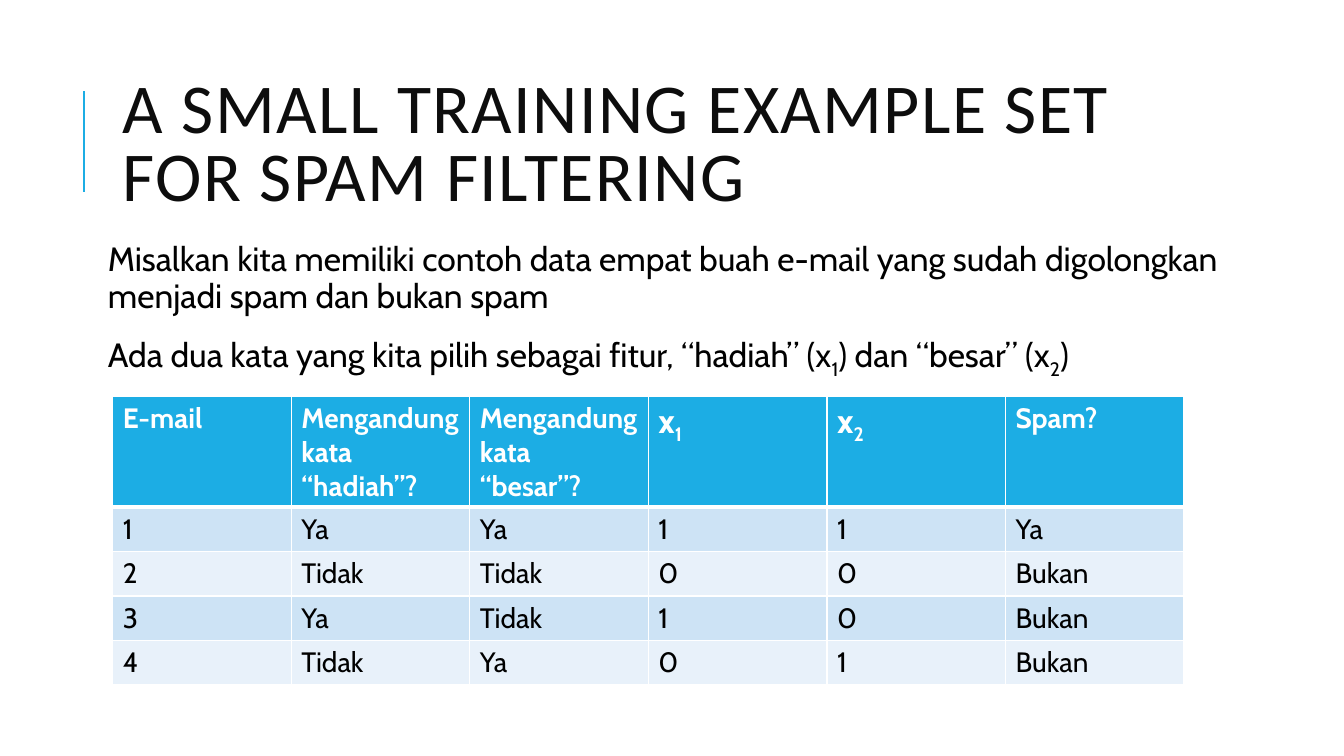
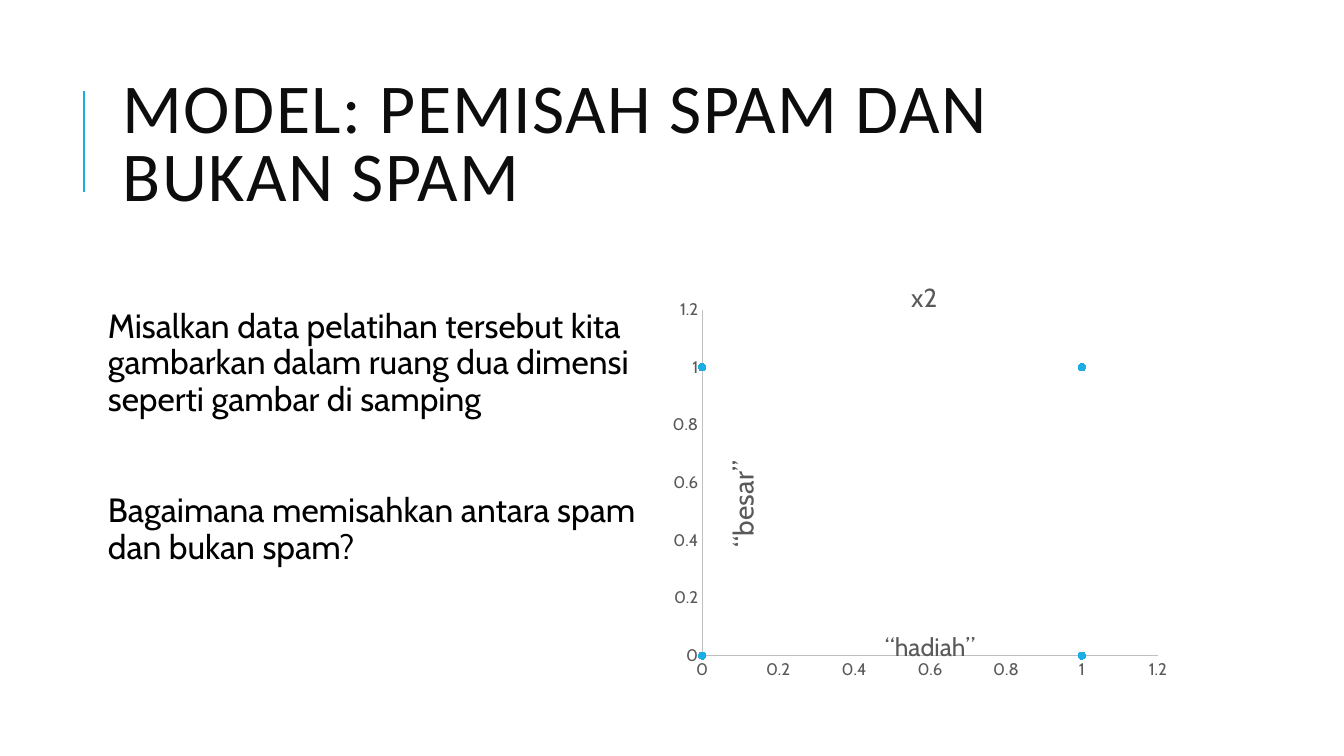
from dataclasses import dataclass

from lxml import etree
from pptx import Presentation, util as u
from pptx.chart import data as chart_data
from pptx.dml import color
from pptx.enum import chart as charts, shapes, text
from pptx.oxml import ns


@dataclass(frozen=True)
class Theme:
    accent: str = "1CADE4"
    title_ink: str = "0D0D0D"
    ink: str = "000000"
    white: str = "FFFFFF"
    gray: str = "595959"
    axis: str = "BFBFBF"
    bands: tuple = ("CDE3F5", "E8F1FA")
    title_font: str = "Calibri"
    body_font: str = "Cabin"
    title_size: float = 50
    body_size: float = 24
    table_size: float = 20
    tick_size: float = 12
    chart_title_size: float = 18.6
    x_title_size: float = 18
    y_title_size: float = 20


def rgb(value):
    return color.RGBColor.from_string(value)


def place(element, index, **values):
    """Give a chart title or plot area a manual layout, in fractions of the chart."""
    layout = element.find(ns.qn("c:layout"))
    if layout is None:
        layout = etree.Element(ns.qn("c:layout"))
        element.insert(index, layout)
    manual = etree.SubElement(layout, ns.qn("c:manualLayout"))
    for name, value in values.items():
        etree.SubElement(manual, ns.qn(f"c:{name}")).set("val", str(value))


class Deck:
    def __init__(self, theme):
        self.theme = theme
        self.presentation = Presentation()
        self.presentation.slide_width = u.Cm(33.87)
        self.presentation.slide_height = u.Cm(19.05)
        self.slide = None

    def style(self, font, size, ink, name=None, bold=False):
        font.name = name or self.theme.body_font
        font.size = u.Pt(size)
        font.bold = bold
        font.color.rgb = rgb(ink)

    def add_runs(self, paragraph, parts, size, ink, bold=False):
        """Add the parts as runs; every second part is a subscript."""
        for index, part in enumerate(parts):
            run = paragraph.add_run()
            run.text = part
            self.style(run.font, size, ink, bold=bold)
            if index % 2:
                run._r.get_or_add_rPr().set("baseline", "-25000")

    def new_slide(self, title):
        theme = self.theme
        self.slide = self.presentation.slides.add_slide(
            self.presentation.slide_layouts.get_by_name("Title Only"))
        self.accent_line()
        shape = self.slide.shapes.title
        shape.left, shape.top = u.Cm(2.84), u.Cm(1.63)
        shape.width, shape.height = u.Cm(27), u.Cm(4.17)
        frame = shape.text_frame
        frame.word_wrap = True
        frame.auto_size = text.MSO_AUTO_SIZE.NONE
        frame.vertical_anchor = text.MSO_ANCHOR.MIDDLE
        paragraph = frame.paragraphs[0]
        paragraph.alignment = text.PP_ALIGN.LEFT
        paragraph.line_spacing = 0.8
        run = paragraph.add_run()
        run.text = title
        self.style(run.font, theme.title_size, theme.title_ink, theme.title_font)
        run._r.get_or_add_rPr().set("spc", "100")

    def accent_line(self):
        line = self.slide.shapes.add_connector(
            shapes.MSO_CONNECTOR.STRAIGHT,
            u.Cm(2.11), u.Cm(4.83), u.Cm(2.11), u.Cm(2.29))
        line.line.color.rgb = rgb(self.theme.accent)
        line.line.width = u.Pt(1.5)
        etree.SubElement(line._element.spPr, ns.qn("a:effectLst"))

    def body(self, top, width, height, paragraphs, gap=12):
        box = self.slide.shapes.add_textbox(
            u.Cm(2.34), u.Cm(top), u.Cm(width), u.Cm(height))
        frame = box.text_frame
        frame.word_wrap = True
        frame.margin_left = u.Cm(0.38)
        frame.margin_right = frame.margin_top = frame.margin_bottom = u.Cm(0.13)
        for index, parts in enumerate(paragraphs):
            paragraph = frame.add_paragraph() if index else frame.paragraphs[0]
            paragraph.line_spacing = 0.9
            paragraph.space_before = u.Pt(gap if index else 12)
            paragraph.space_after = u.Pt(2)
            self.add_runs(paragraph, parts, self.theme.body_size, self.theme.ink)

    def cell_borders(self, cell, top, bottom):
        """Draw white borders; top and bottom are widths in points."""
        properties = cell._tc.get_or_add_tcPr()
        widths = {"lnL": 1, "lnR": 1, "lnT": top, "lnB": bottom}
        for index, (side, width) in enumerate(widths.items()):
            line = etree.Element(ns.qn(f"a:{side}"), w=str(u.Pt(width)))
            fill = etree.SubElement(line, ns.qn("a:solidFill"))
            etree.SubElement(fill, ns.qn("a:srgbClr"), val=self.theme.white)
            properties.insert(index, line)

    def table(self, header, rows):
        theme = self.theme
        heights = [2.8] + [1.12] * len(rows)
        table = self.slide.shapes.add_table(
            len(heights), len(header), u.Cm(2.84), u.Cm(9.98),
            u.Cm(27), u.Cm(sum(heights))).table
        table.horz_banding = False
        for column in table.columns:
            column.width = u.Cm(27 / len(header))
        for row_index, values in enumerate([header, *rows]):
            table.rows[row_index].height = u.Cm(heights[row_index])
            is_header = row_index == 0
            fill = theme.accent if is_header else theme.bands[(row_index - 1) % 2]
            for column_index, value in enumerate(values):
                cell = table.cell(row_index, column_index)
                cell.fill.solid()
                cell.fill.fore_color.rgb = rgb(fill)
                self.cell_borders(cell, top=3 if row_index == 1 else 1,
                                  bottom=3 if is_header else 1)
                parts = (value,) if isinstance(value, str) else value
                size = theme.table_size if len(parts) == 1 else theme.body_size
                ink = theme.white if is_header else theme.ink
                self.add_runs(cell.text_frame.paragraphs[0], parts, size, ink, is_header)

    def chart_label(self, title, label, size, x, y):
        self.add_runs(title.text_frame.paragraphs[0], [label], size, self.theme.gray)
        place(title._element, 1, xMode="edge", yMode="edge", x=x, y=y)

    def format_axis(self, axis):
        axis.minimum_scale, axis.maximum_scale, axis.major_unit = 0, 1.2, 0.2
        axis.has_major_gridlines = False
        axis.major_tick_mark = axis.minor_tick_mark = charts.XL_TICK_MARK.NONE
        axis.format.line.color.rgb = rgb(self.theme.axis)
        axis.format.line.width = u.Pt(0.75)
        axis.tick_labels.number_format = "General"
        axis.tick_labels.number_format_is_linked = False
        self.style(axis.tick_labels.font, self.theme.tick_size, self.theme.gray)

    def scatter(self, name, points, x_title, y_title):
        theme = self.theme
        data = chart_data.XyChartData()
        series_data = data.add_series(name)
        for x, y in points:
            series_data.add_data_point(x, y)
        chart = self.slide.shapes.add_chart(
            charts.XL_CHART_TYPE.XY_SCATTER, u.Cm(16.64), u.Cm(6.35),
            u.Cm(13.2), u.Cm(11.18), data).chart
        self.style(chart.font, 10, theme.ink)
        chart.has_legend = False
        chart.has_title = True
        self.chart_label(chart.chart_title, name, theme.chart_title_size, 0.47, 0.05)

        x_axis, y_axis = chart.category_axis, chart.value_axis
        for axis in (x_axis, y_axis):
            self.format_axis(axis)
        self.chart_label(x_axis.axis_title, x_title, theme.x_title_size, 0.42, 0.84)
        self.chart_label(y_axis.axis_title, y_title, theme.y_title_size, 0.11, 0.46)
        direction = y_axis.axis_title.text_frame._txBody.bodyPr
        direction.set("rot", "-5400000")
        direction.set("vert", "horz")

        plot = chart.plots[0]
        plot.vary_by_categories = False
        series = plot.series[0]
        series.format.line.fill.background()
        series.marker.style = charts.XL_MARKER_STYLE.CIRCLE
        series.marker.size = 5
        series.marker.format.fill.solid()
        series.marker.format.fill.fore_color.rgb = rgb(theme.accent)
        series.marker.format.line.color.rgb = rgb(theme.accent)
        place(chart._chartSpace.find(".//" + ns.qn("c:plotArea")), 0,
              layoutTarget="inner", xMode="edge", yMode="edge",
              x=0.08, y=0.13, w=0.87, h=0.78)


def main():
    deck = Deck(Theme())

    deck.new_slide("A SMALL TRAINING EXAMPLE SET FOR SPAM FILTERING")
    deck.body(5.99, 28.75, 3.96, [
        ["Misalkan kita memiliki contoh data empat buah e-mail yang sudah "
         "digolongkan menjadi spam dan bukan spam"],
        ["Ada dua kata yang kita pilih sebagai fitur, “hadiah” (x", "1",
         ") dan “besar” (x", "2", ")"],
    ])
    deck.table(
        ["E-mail", "Mengandung kata “hadiah”?", "Mengandung kata “besar”?",
         ("x", "1"), ("x", "2"), "Spam?"],
        [["1", "Ya", "Ya", "1", "1", "Ya"],
         ["2", "Tidak", "Tidak", "0", "0", "Bukan"],
         ["3", "Ya", "Tidak", "1", "0", "Bukan"],
         ["4", "Tidak", "Ya", "0", "1", "Bukan"]])

    deck.new_slide("MODEL: PEMISAH SPAM DAN BUKAN SPAM")
    deck.body(7.67, 14.4, 8.33, [
        ["Misalkan data pelatihan tersebut kita gambarkan dalam ruang dua "
         "dimensi seperti gambar di samping"],
        ["Bagaimana memisahkan antara spam dan bukan spam?"],
    ], gap=52)
    deck.scatter("x2", [(1, 1), (0, 0), (1, 0), (0, 1)], "“hadiah”", "“besar”")

    deck.presentation.save("out.pptx")


if __name__ == "__main__":
    main()
